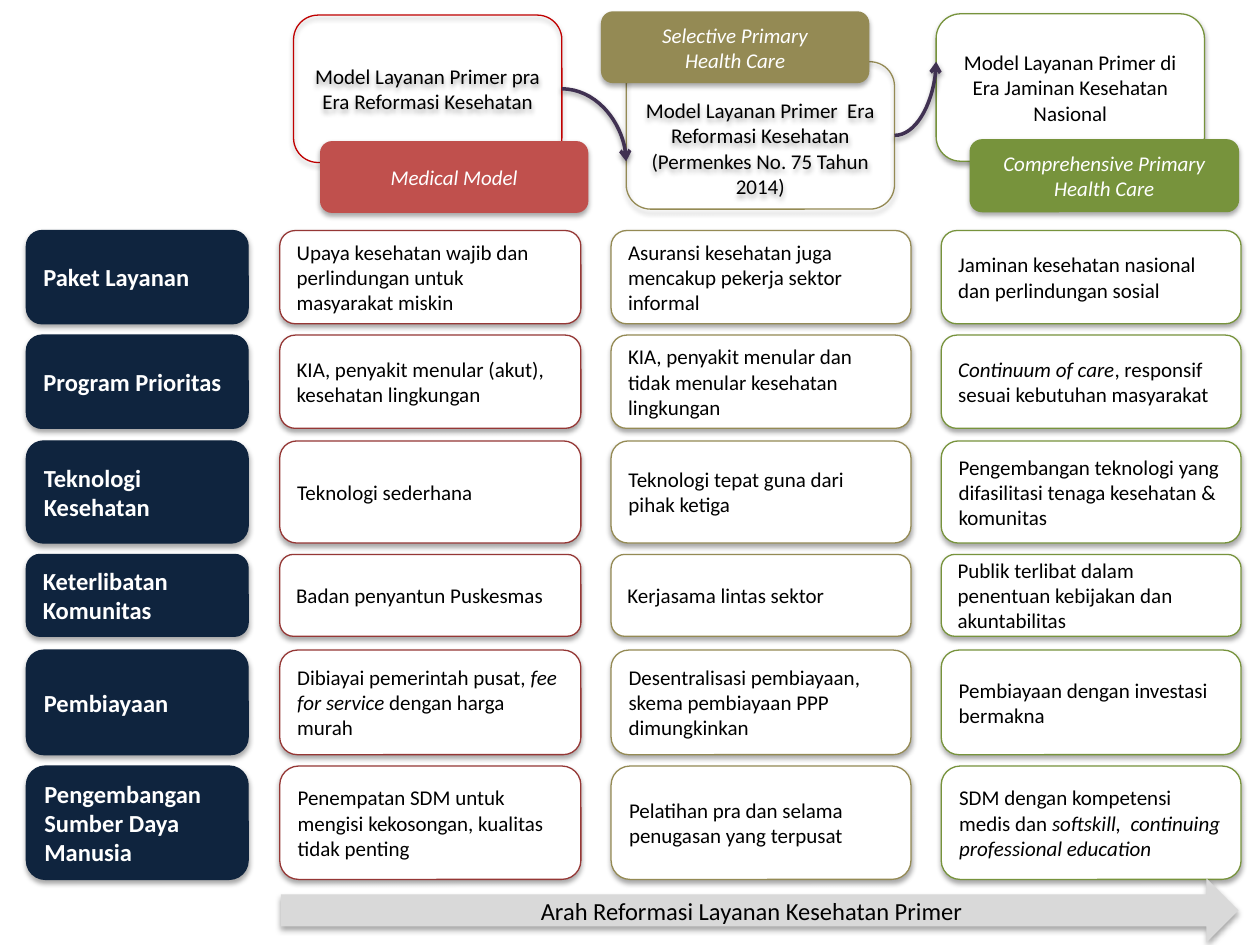
from dataclasses import dataclass

from lxml.etree import SubElement
from pptx import Presentation
from pptx.dml.color import RGBColor
from pptx.enum.shapes import MSO_CONNECTOR, MSO_SHAPE
from pptx.enum.text import MSO_ANCHOR, PP_ALIGN
from pptx.oxml.ns import qn
from pptx.util import Inches, Pt

NAVY, RED, OLIVE, GREEN = "0F243E", "953735", "948A54", "77933C"
WHITE, BLACK = "FFFFFF", "000000"
LABEL_FORMAT = {"size": Pt(14), "bold": True}
BODY_FORMAT = {"size": Pt(12)}


@dataclass
class Box:
    left: float
    top: float
    width: float
    height: float
    text: str  # parts between asterisks are italic, line breaks start paragraphs
    fill: str | None = WHITE
    line: str | None = None
    color: str = BLACK
    align: PP_ALIGN = PP_ALIGN.LEFT
    kind: MSO_SHAPE = MSO_SHAPE.ROUNDED_RECTANGLE
    top_margin: float = 0.05


@dataclass
class Column:
    left: float
    width: float
    fill: str
    line: str
    color: str
    font: dict
    texts: tuple


@dataclass
class Row:
    top: float
    height: float


ROWS = [Row(1.83, 0.74), Row(2.66, 0.74), Row(3.5, 0.81),
        Row(4.4, 0.65), Row(5.16, 0.83), Row(6.08, 0.9)]

COLUMNS = [
    Column(0.21, 1.76, NAVY, NAVY, WHITE, LABEL_FORMAT, (
        "Paket Layanan",
        "Program Prioritas",
        "Teknologi Kesehatan",
        "Keterlibatan Komunitas",
        "Pembiayaan",
        "Pengembangan Sumber Daya Manusia")),
    Column(2.22, 2.39, WHITE, RED, BLACK, BODY_FORMAT, (
        "Upaya kesehatan wajib dan perlindungan untuk masyarakat miskin",
        "KIA, penyakit menular (akut), kesehatan lingkungan",
        "Teknologi sederhana",
        "Badan penyantun Puskesmas",
        "Dibiayai pemerintah pusat, *fee for service *dengan harga murah",
        "Penempatan SDM untuk mengisi kekosongan, kualitas tidak penting")),
    Column(4.85, 2.38, WHITE, OLIVE, BLACK, BODY_FORMAT, (
        "Asuransi kesehatan juga mencakup pekerja sektor informal",
        "KIA, penyakit menular dan tidak menular kesehatan lingkungan",
        "Teknologi tepat guna dari pihak ketiga",
        "Kerjasama lintas sektor",
        "Desentralisasi pembiayaan, skema pembiayaan PPP dimungkinkan",
        "Pelatihan pra dan selama penugasan yang terpusat")),
    Column(7.47, 2.38, WHITE, GREEN, BLACK, BODY_FORMAT, (
        "Jaminan kesehatan nasional dan perlindungan sosial",
        "*Continuum of care*, responsif sesuai kebutuhan masyarakat",
        "Pengembangan teknologi yang difasilitasi tenaga kesehatan & komunitas",
        "Publik terlibat dalam penentuan kebijakan dan akuntabilitas",
        "Pembiayaan dengan investasi bermakna",
        "SDM dengan kompetensi medis dan *softskill,  continuing professional education*")),
]

CENTER = PP_ALIGN.CENTER
MODELS = [
    Box(2.33, 0.12, 2.13, 1.17, "Model Layanan Primer pra Era Reformasi Kesehatan",
        None, "C00000", align=CENTER),
    Box(4.97, 0.49, 2.13, 1.17,
        "Model Layanan Primer  Era Reformasi Kesehatan\n(Permenkes No. 75 Tahun 2014)",
        None, OLIVE, align=CENTER, top_margin=0.25),
    Box(7.43, 0.11, 2.13, 1.17, "Model Layanan Primer di Era Jaminan Kesehatan Nasional",
        WHITE, GREEN, align=CENTER),
]
TAGS = [
    Box(2.54, 1.12, 2.13, 0.57, "*Medical Model*", "C0504D", None, WHITE, CENTER),
    Box(4.77, 0.09, 2.13, 0.57, "*Selective Primary*\n*Health Care*",
        OLIVE, None, WHITE, CENTER),
    Box(7.7, 1.11, 2.13, 0.57, "*Comprehensive Primary Health Care*",
        GREEN, GREEN, WHITE, CENTER),
]
DIRECTION = Box(2.23, 6.97, 7.6, 0.51, "Arah Reformasi Layanan Kesehatan Primer",
                "D9D9D9", align=CENTER, kind=MSO_SHAPE.RIGHT_ARROW)


def rgb(value: str) -> RGBColor:
    return RGBColor.from_string(value)


def add_shadow(shape, opacity: int = 35) -> None:
    properties = shape._element.spPr
    effects = properties.find(qn("a:effectLst"))
    if effects is None:
        effects = SubElement(properties, qn("a:effectLst"))
    shadow = SubElement(effects, qn("a:outerShdw"), blurRad=str(Pt(3.1)),
                        dist=str(Pt(1.8)), dir="5400000", rotWithShape="0")
    color = SubElement(shadow, qn("a:srgbClr"), val=BLACK)
    SubElement(color, qn("a:alpha"), val=str(opacity * 1000))


def write_text(shape, box: Box, font_format: dict) -> None:
    frame = shape.text_frame
    frame.word_wrap = True
    frame.vertical_anchor = MSO_ANCHOR.MIDDLE
    frame.margin_top = Inches(box.top_margin)
    for index, line in enumerate(box.text.split("\n")):
        paragraph = frame.add_paragraph() if index else frame.paragraphs[0]
        paragraph.alignment = box.align
        for position, part in enumerate(line.split("*")):
            if not part:
                continue
            run = paragraph.add_run()
            run.text = part
            values = {"name": "Calibri", "italic": position % 2 == 1, **font_format}
            for name, value in values.items():
                setattr(run.font, name, value)
            run.font.color.rgb = rgb(box.color)


def add_box(slide, box: Box, font_format: dict):
    shape = slide.shapes.add_shape(box.kind, Inches(box.left), Inches(box.top),
                                   Inches(box.width), Inches(box.height))
    shape.shadow.inherit = False
    if box.fill:
        shape.fill.solid()
        shape.fill.fore_color.rgb = rgb(box.fill)
    else:
        shape.fill.background()
    if box.line:
        shape.line.color.rgb = rgb(box.line)
        shape.line.width = Pt(0.75)
    else:
        shape.line.fill.background()
    add_shadow(shape)
    write_text(shape, box, font_format)
    return shape


def add_curved_arrow(slide, source, end_x: float, end_y: float) -> None:
    """Leave the right side of source sideways and reach the end vertically."""
    connector = slide.shapes.add_connector(
        MSO_CONNECTOR.CURVE, source.left + source.width,
        source.top + source.height // 2, Inches(end_x), Inches(end_y))
    connector.begin_connect(source, 3)
    connector._element.spPr.find(qn("a:prstGeom")).set("prst", "curvedConnector2")
    connector.line.color.rgb = rgb("403152")
    connector.line.width = Pt(2)
    SubElement(connector.line._get_or_add_ln(), qn("a:tailEnd"), type="arrow")
    add_shadow(connector, 38)


def main() -> None:
    presentation = Presentation()
    presentation.slide_width, presentation.slide_height = Inches(10), Inches(7.5)
    slide = presentation.slides.add_slide(presentation.slide_layouts[6])

    models = []
    for model, tag in zip(MODELS, TAGS):
        models.append(add_box(slide, model, BODY_FORMAT))
        add_box(slide, tag, BODY_FORMAT)
    for column in COLUMNS:
        for row, text in zip(ROWS, column.texts):
            add_box(slide, Box(column.left, row.top, column.width, row.height, text,
                               column.fill, column.line, column.color), column.font)
    add_curved_arrow(slide, models[0], 4.97, 1.28)
    add_curved_arrow(slide, models[1], 7.43, 0.49)
    add_box(slide, DIRECTION, {"size": Pt(14)})
    presentation.save("out.pptx")


if __name__ == "__main__":
    main()
